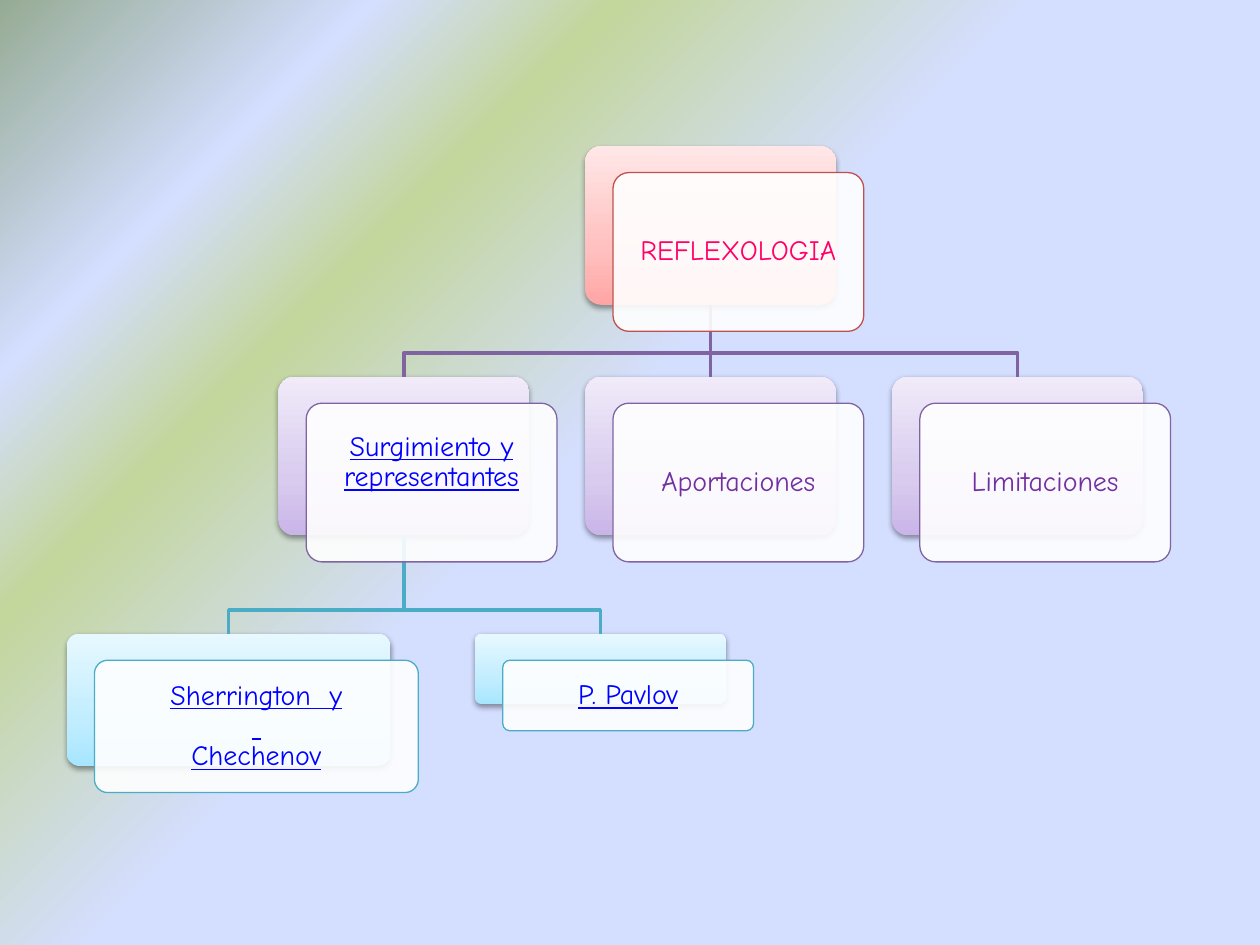
from collections import namedtuple

from pptx import Presentation
from pptx.dml.color import RGBColor
from pptx.enum.shapes import MSO_CONNECTOR, MSO_SHAPE
from pptx.enum.text import MSO_ANCHOR, PP_ALIGN
from pptx.oxml import parse_xml
from pptx.oxml.ns import nsdecls
from pptx.util import Inches, Pt

ROUND_RECT = MSO_SHAPE.ROUNDED_RECTANGLE
STRAIGHT = MSO_CONNECTOR.STRAIGHT
MIDDLE, CENTER = MSO_ANCHOR.MIDDLE, PP_ALIGN.CENTER
BOTTOM_SIDE, TOP_SIDE = 2, 0

FONT = "Comic Neue"
WHITE = RGBColor(0xFF, 0xFF, 0xFF)
RED = RGBColor(0xC0, 0x50, 0x4D)
PURPLE = RGBColor(0x80, 0x64, 0xA2)
AQUA = RGBColor(0x4B, 0xAC, 0xC6)
PINK_TEXT = RGBColor(0xFF, 0x00, 0x66)
PURPLE_TEXT = RGBColor(0x70, 0x30, 0xA0)
LINK_BLUE = RGBColor(0x00, 0x00, 0xFF)
PERIWINKLE = RGBColor(0xD4, 0xDE, 0xFF)
OLIVE = RGBColor(0xC3, 0xD6, 0x9B)
SAGE = RGBColor(0x96, 0xAB, 0x94)

BACKGROUND = [(53, PERIWINKLE), (72, OLIVE), (83, PERIWINKLE), (100, SAGE)]
PANEL_STOPS = {
    RED: ["FFA6A5", "FFC0BF", "FFE7E7"],
    PURPLE: ["C9B5E8", "D8CBEE", "F0EAF9"],
    AQUA: ["A7E6FF", "C1EDFF", "E7F8FF"],
}
COLS = [2.21 + 2.435 * i for i in range(3)]
ROWS = [1.16, 2.99, 5.03]
BOX_W, BOX_H = 1.99, 1.26
CARD_DX, CARD_DY = 0.22, 0.21
INSET = 0.07
BEND_ABOVE_CHILD = 0.19

Node = namedtuple("Node", "text x y w h accent color linked parent lift")
NODES = [
    Node("REFLEXOLOGIA", COLS[1], ROWS[0], BOX_W, BOX_H, RED, PINK_TEXT, False, None, 0),
    Node("Surgimiento y representantes", COLS[0], ROWS[1], BOX_W, BOX_H,
         PURPLE, LINK_BLUE, True, 0, 0.32),
    Node("Sherrington  y\v \vChechenov", 0.53, ROWS[2], 2.57, 1.05,
         AQUA, LINK_BLUE, True, 1, 0),
    Node("P. Pavlov", 3.77, ROWS[2], BOX_W, 0.56, AQUA, LINK_BLUE, True, 1, 0),
    Node("Aportaciones", COLS[1], ROWS[1], BOX_W, BOX_H, PURPLE, PURPLE_TEXT, False, 0, 0),
    Node("Limitaciones", COLS[2], ROWS[1], BOX_W, BOX_H, PURPLE, PURPLE_TEXT, False, 0, 0),
]


def gradient(stops, direction):
    gs = "".join(f'<a:gs pos="{pos * 1000}"><a:srgbClr val="{color}"/></a:gs>'
                 for pos, color in stops)
    return parse_xml(f'<a:gradFill {nsdecls("a")} rotWithShape="1">'
                     f'<a:gsLst>{gs}</a:gsLst>{direction}</a:gradFill>')


def set_background(s):
    s.background.fill.solid()
    bg = s.element.xpath(".//p:bgPr")[0]
    bg.replace(bg[0], gradient(
        BACKGROUND,
        '<a:path path="circle"><a:fillToRect l="100000" t="100000"/></a:path>'))


def add_round_rect(s, x, y, w, h):
    sp = s.shapes.add_shape(ROUND_RECT, Inches(x), Inches(y), Inches(w), Inches(h))
    sp.adjustments[0] = 0.1
    return sp


def add_panel(s, node):
    """Add the shaded box behind a card."""
    sp = add_round_rect(s, node.x, node.y, node.w, node.h)
    sp.line.fill.background()
    pr = sp.element.spPr
    pr.insert(2, gradient(zip((0, 35, 100), PANEL_STOPS[node.accent]),
                          '<a:lin ang="16200000" scaled="1"/>'))
    pr.append(parse_xml(
        f'<a:effectLst {nsdecls("a")}><a:outerShdw blurRad="40000" dist="20000" '
        'dir="5400000" rotWithShape="0"><a:srgbClr val="000000">'
        '<a:alpha val="38000"/></a:srgbClr></a:outerShdw></a:effectLst>'))
    return sp


def add_card(s, node):
    """Add the translucent white box that carries the text."""
    sp = add_round_rect(s, node.x + CARD_DX, node.y + CARD_DY, node.w, node.h)
    sp.shadow.inherit = False
    sp.fill.solid()
    sp.fill.fore_color.rgb = WHITE
    sp.element.spPr.xpath("./a:solidFill/a:srgbClr")[0].append(
        parse_xml(f'<a:alpha {nsdecls("a")} val="90000"/>'))
    sp.line.color.rgb = node.accent
    sp.line.width = Pt(0.75)

    tf = sp.text_frame
    tf.word_wrap = True
    tf.vertical_anchor = MIDDLE
    tf.margin_left = tf.margin_right = tf.margin_top = Inches(INSET)
    tf.margin_bottom = Inches(INSET + node.lift)
    p = tf.paragraphs[0]
    p.text = node.text
    p.alignment = CENTER
    p.line_spacing = 0.9
    for r in p.runs:
        r.font.name = FONT
        r.font.size = Pt(16)
        r.font.color.rgb = node.color
        if node.linked:
            r.font.underline = True


def add_branch(s, parent, child, parent_panel, child_panel):
    x1, y1 = parent.x + parent.w / 2, parent.y + parent.h
    x2, y2 = child.x + child.w / 2, child.y
    if x1 == x2:
        sp = s.shapes.add_connector(STRAIGHT, Inches(x1), Inches(y1), Inches(x2), Inches(y2))
        sp.begin_connect(parent_panel, BOTTOM_SIDE)
        sp.end_connect(child_panel, TOP_SIDE)
        sp.element.spPr.append(parse_xml(f'<a:effectLst {nsdecls("a")}/>'))
    else:
        bend = y2 - BEND_ABOVE_CHILD
        builder = s.shapes.build_freeform(Inches(x1), Inches(y1))
        builder.add_line_segments(
            [(Inches(x), Inches(y)) for x, y in ((x1, bend), (x2, bend), (x2, y2))],
            close=False)
        sp = builder.convert_to_shape()
        sp.shadow.inherit = False
        sp.fill.background()
    sp.line.color.rgb = child.accent
    sp.line.width = Pt(2)


def main():
    prs = Presentation()
    prs.slide_width, prs.slide_height = Inches(10), Inches(7.5)
    s = prs.slides.add_slide(prs.slide_layouts[6])
    set_background(s)
    panels = [add_panel(s, node) for node in NODES]
    for node, panel in zip(NODES, panels):
        if node.parent is not None:
            add_branch(s, NODES[node.parent], node, panels[node.parent], panel)
    for node in NODES:
        add_card(s, node)
    prs.save("out.pptx")


if __name__ == "__main__":
    main()
